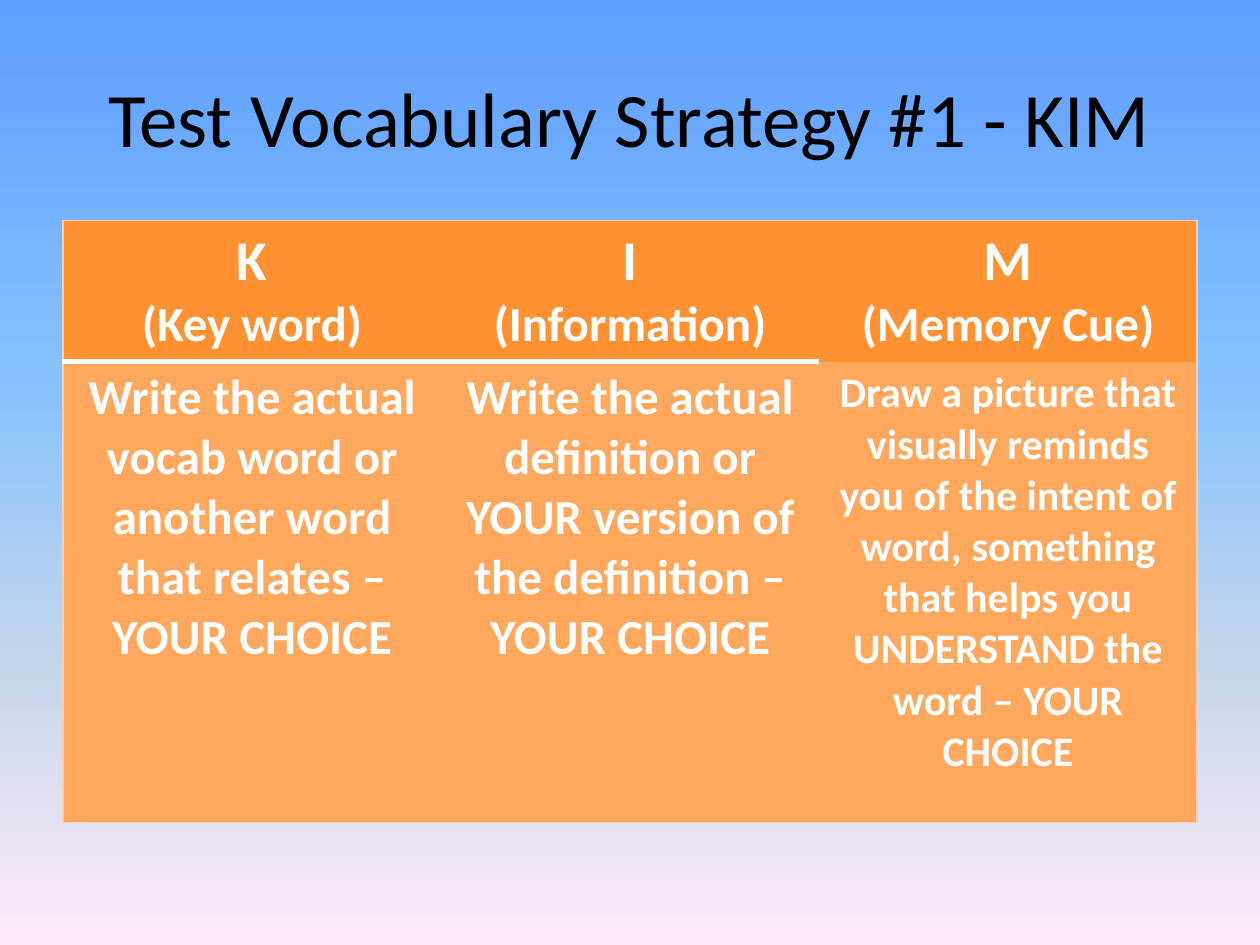
from copy import deepcopy
from typing import NamedTuple, Optional

from lxml import etree
from pptx import Presentation
from pptx.dml.color import RGBColor
from pptx.enum import text
from pptx.oxml.ns import qn
from pptx.util import Inches, Pt

FONT = "Calibri"
WHITE, BLACK = "FFFFFF", "000000"
HEADER_FILL, BODY_FILL = "FF9133", "FFA75C"
BACKGROUND = [(0, "5E9EFF"), (40, "85C2FF"), (70, "C4D6EB"), (100, "FFEBFA")]


class Line(NamedTuple):
    color: str
    width: float


class Column(NamedTuple):
    letter: str
    meaning: str
    advice: str
    advice_size: int
    rule: Optional[Line]


EDGE = Line("F7CEBB", 0.75)
RULE = Line(WHITE, 3)
COLUMNS = [
    Column("K", "(Key word)",
           "Write the actual vocab word or another word that relates – YOUR CHOICE", 28, RULE),
    Column("I", "(Information)",
           "Write the actual definition or YOUR version of the definition – YOUR CHOICE", 28, RULE),
    Column("M", "(Memory Cue)",
           "Draw a picture that visually reminds you of the intent of word, something "
           "that helps you UNDERSTAND the word – YOUR CHOICE", 24, None),
]


def rgb(color: str) -> RGBColor:
    return RGBColor.from_string(color)


def paint_background(s) -> None:
    fill = s.background.fill
    fill.gradient()
    fill.gradient_angle = 270
    stops = s.background._cSld.find(".//" + qn("a:gsLst"))
    first = stops[0]
    for _ in BACKGROUND:
        stops.append(deepcopy(first))
    for extra in list(stops)[:-len(BACKGROUND)]:
        stops.remove(extra)
    for stop, (position, color) in zip(fill.gradient_stops, BACKGROUND):
        stop.position = position / 100
        stop.color.rgb = rgb(color)


def write(p, words: str, size: int, color: str, bold: bool) -> None:
    p.alignment = text.PP_ALIGN.CENTER
    r = p.add_run()
    r.text = words
    r.font.name, r.font.size, r.font.bold = FONT, Pt(size), bold
    r.font.color.rgb = rgb(color)


def set_borders(cell, **lines: Optional[Line]) -> None:
    """Set the sides L, R, T and B; a side left out is drawn without a line."""
    tc_pr = cell._tc.get_or_add_tcPr()
    for i, side in enumerate("LRTB"):
        line = lines.get(side)
        ln = etree.Element(qn(f"a:ln{side}"))
        tc_pr.insert(i, ln)
        if line is None:
            etree.SubElement(ln, qn("a:noFill"))
            continue
        ln.set("w", str(Pt(line.width)))
        solid = etree.SubElement(ln, qn("a:solidFill"))
        etree.SubElement(solid, qn("a:srgbClr"), val=line.color)


def fill_cell(cell, color: str, lines: list[tuple[str, int]]) -> None:
    cell.fill.solid()
    cell.fill.fore_color.rgb = rgb(color)
    tf = cell.text_frame
    for i, (words, size) in enumerate(lines):
        p = tf.add_paragraph() if i else tf.paragraphs[0]
        write(p, words, size, WHITE, True)


def add_title(s, words: str) -> None:
    tf = s.shapes.add_textbox(Inches(0.5), Inches(0.3), Inches(9), Inches(1.25)).text_frame
    tf.word_wrap = True
    tf.vertical_anchor = text.MSO_ANCHOR.MIDDLE
    write(tf.paragraphs[0], words, 44, BLACK, False)


def add_strategy_table(s) -> None:
    table = s.shapes.add_table(2, len(COLUMNS), Inches(0.5), Inches(1.75),
                               Inches(9), Inches(4.78)).table
    table.first_row = table.horz_banding = False
    table.rows[0].height, table.rows[1].height = Inches(1.12), Inches(3.66)
    for i, column in enumerate(COLUMNS):
        header, body = table.cell(0, i), table.cell(1, i)
        fill_cell(header, HEADER_FILL, [(column.letter, 32), (column.meaning, 28)])
        fill_cell(body, BODY_FILL, [(column.advice, column.advice_size)])
        left = EDGE if i == 0 else None
        right = EDGE if i == len(COLUMNS) - 1 else None
        set_borders(header, L=left, R=right, T=EDGE, B=column.rule)
        set_borders(body, L=left, R=right, T=column.rule, B=EDGE)


def main() -> None:
    prs = Presentation()
    prs.slide_width, prs.slide_height = Inches(10), Inches(7.5)
    s = prs.slides.add_slide(prs.slide_layouts[6])
    paint_background(s)
    add_title(s, "Test Vocabulary Strategy #1 - KIM")
    add_strategy_table(s)
    prs.save("out.pptx")


if __name__ == "__main__":
    main()
